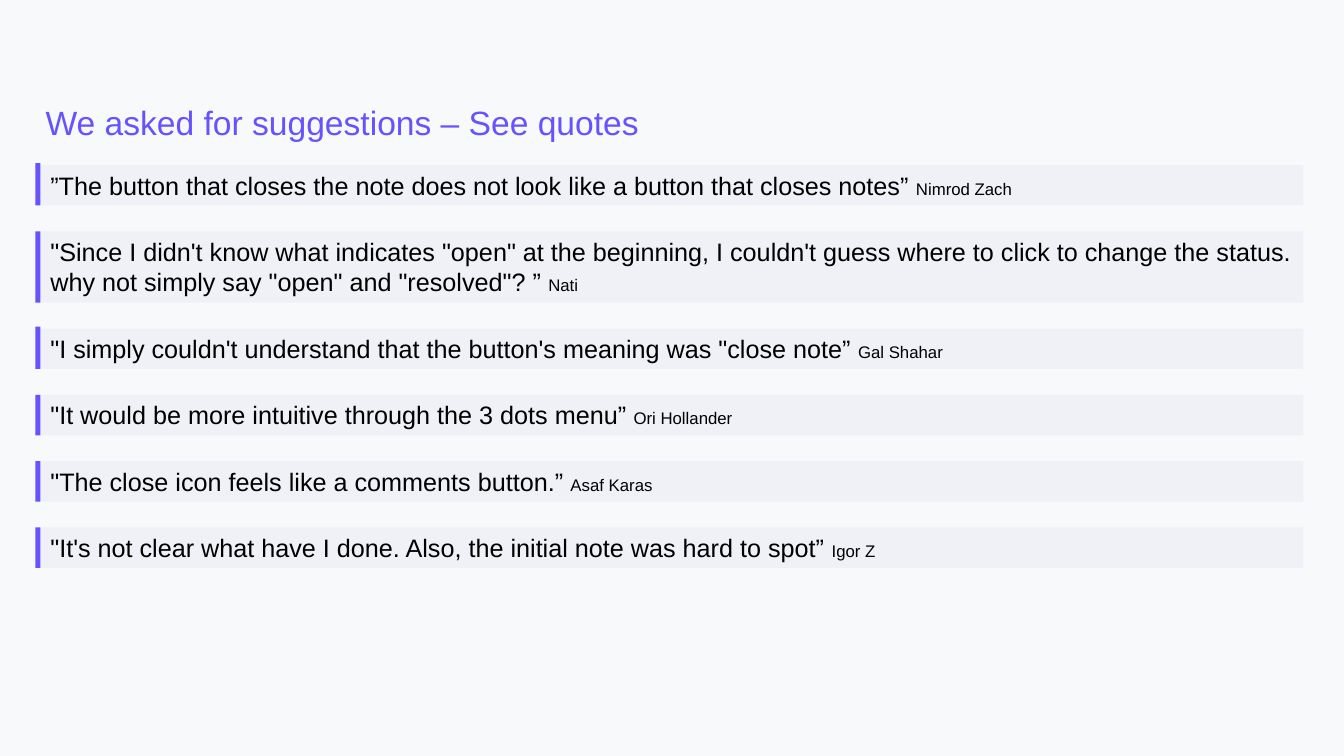
from lxml.etree import SubElement
from pptx import Presentation
from pptx.dml.color import RGBColor
from pptx.enum.shapes import MSO_SHAPE
from pptx.enum.text import MSO_ANCHOR, MSO_AUTO_SIZE, PP_ALIGN
from pptx.oxml.ns import qn
from pptx.util import Cm, Pt

COLORS = {"page": "F8F9FA", "accent": "6653FF", "panel": "BEC6EA", "text": "000000"}
FONT = "Arial"

# Quote layout, in centimetres
LEFT, TOP, WIDTH = 1.02, 4.16, 31.83
BAR_WIDTH, GAP = 0.13, 0.65
LINE_HEIGHT, PADDING = 0.78, 0.24

# Quote, author, number of lines, rise of the bar above the panel
QUOTES = [
    ("”The button that closes the note does not look like a button that closes notes” ",
     "Nimrod Zach", 1, 0.05),
    ("\"Since I didn't know what indicates \"open\" at the beginning, I couldn't guess "
     "where to click to change the status. why not simply say \"open\" and \"resolved\"? ” ",
     "Nati", 2, 0),
    ("\"I simply couldn't understand that the button's meaning was \"close note” ",
     "Gal Shahar", 1, 0.05),
    ("\"It would be more intuitive through the 3 dots menu” ", "Ori Hollander", 1, 0),
    ("\"The close icon feels like a comments button.” ", "Asaf Karas", 1, 0),
    ("\"It's not clear what have I done. Also, the initial note was hard to spot” ",
     "Igor Z", 1, 0),
]


def rgb(name):
    return RGBColor.from_string(COLORS[name])


def add_rect(s, left, top, width, height, color, alpha=None):
    sp = s.shapes.add_shape(MSO_SHAPE.RECTANGLE, Cm(left), Cm(top), Cm(width), Cm(height))
    sp.shadow.inherit = False
    sp.line.fill.background()
    sp.fill.solid()
    sp.fill.fore_color.rgb = rgb(color)
    if alpha is not None:
        srgb = sp.fill._xPr.find(".//" + qn("a:srgbClr"))
        SubElement(srgb, qn("a:alpha")).set("val", str(alpha * 1000))
    return sp


def add_title(s, text):
    tf = s.shapes.add_textbox(Cm(LEFT), Cm(2.44), Cm(20.73), Cm(3.2)).text_frame
    tf.word_wrap = True
    tf.margin_left = tf.margin_right = tf.margin_top = tf.margin_bottom = Cm(0.13)
    p = tf.paragraphs[0]
    p.text = text
    p.font.name, p.font.size = FONT, Pt(24)
    p.font.color.rgb = rgb("accent")


def add_quote(s, top, height, quote, author, bar_rise):
    # Translucent panel with the text
    tf = add_rect(s, LEFT, top, WIDTH, height, "panel", alpha=15).text_frame
    tf.word_wrap = True
    tf.auto_size = MSO_AUTO_SIZE.SHAPE_TO_FIT_TEXT
    tf.vertical_anchor = MSO_ANCHOR.TOP
    p = tf.paragraphs[0]
    p.alignment = PP_ALIGN.LEFT
    p.font.name = FONT
    p.font.color.rgb = rgb("text")
    for text, size in ((quote, 18), (author, 12)):
        r = p.add_run()
        r.text = text
        r.font.size = Pt(size)
    # Accent bar
    add_rect(s, LEFT - BAR_WIDTH, top - bar_rise, BAR_WIDTH, height + bar_rise, "accent")


def main():
    prs = Presentation()
    prs.slide_width, prs.slide_height = Cm(33.87), Cm(19.05)
    s = prs.slides.add_slide(prs.slide_layouts[6])
    s.background.fill.solid()
    s.background.fill.fore_color.rgb = rgb("page")

    add_title(s, "We asked for suggestions – See quotes")

    # Quotes stacked with equal gaps
    top = TOP
    for quote, author, lines, bar_rise in QUOTES:
        height = lines * LINE_HEIGHT + PADDING
        add_quote(s, top, height, quote, author, bar_rise)
        top += height + GAP

    prs.save("out.pptx")


if __name__ == "__main__":
    main()
